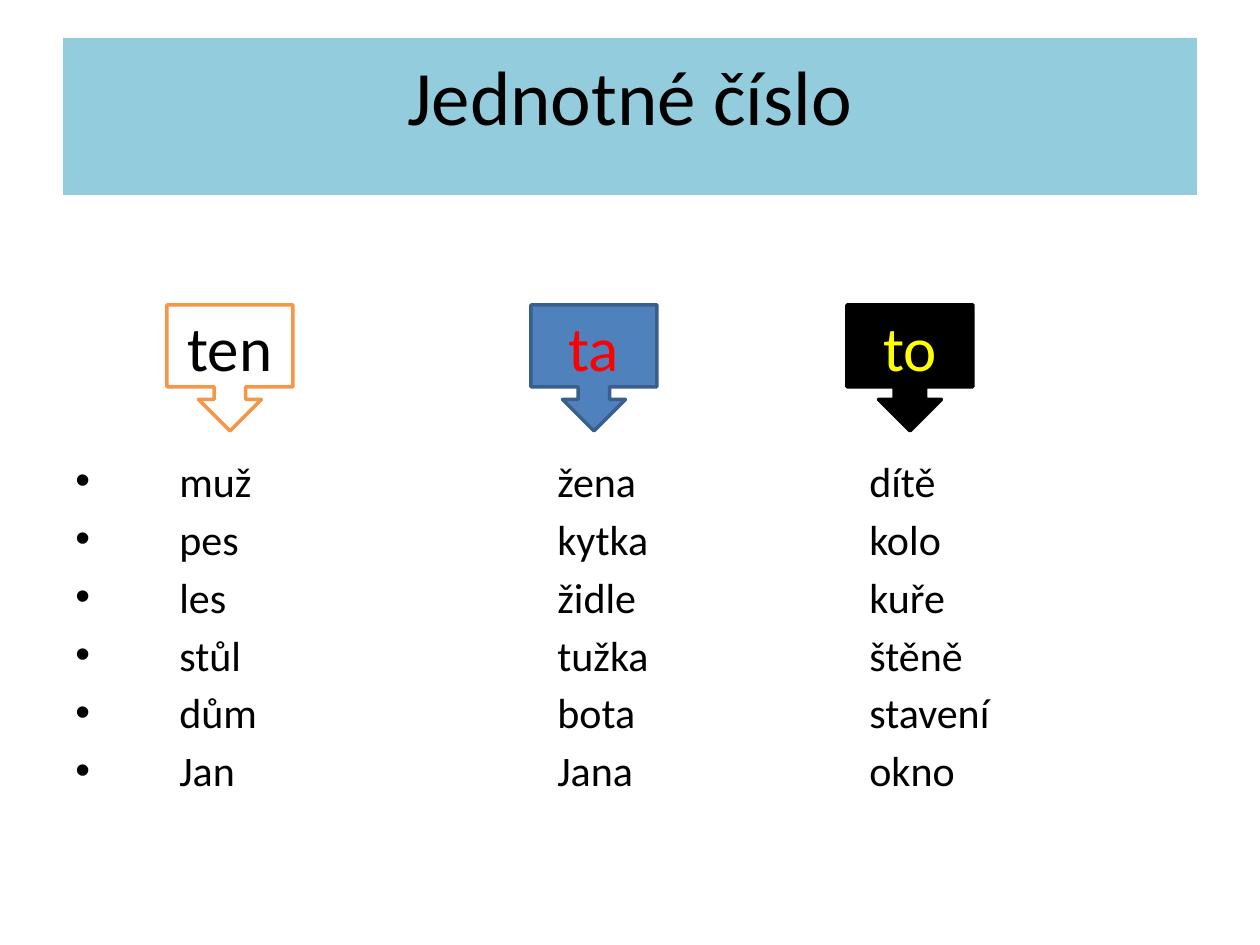
from dataclasses import dataclass

from lxml.etree import SubElement
from pptx import Presentation
from pptx.dml.color import RGBColor
from pptx.enum.shapes import MSO_SHAPE as Shape
from pptx.enum.text import MSO_ANCHOR as Anchor, PP_ALIGN as Align
from pptx.oxml.ns import qn
from pptx.util import Emu, Pt

FONT = "Calibri"
COLORS = {
    "banner": "93CDDD",
    "black": "000000",
    "white": "FFFFFF",
    "orange": "F79646",
    "blue": "4F81BD",
    "navy": "3A5F8C",
    "red": "FF0000",
    "yellow": "FFFF00",
}


@dataclass
class Callout:
    word: str
    left: int
    fill: str
    line: str
    text: str


CALLOUTS = [
    Callout("ten", 167, "white", "orange", "black"),
    Callout("ta", 531, "blue", "navy", "red"),
    Callout("to", 847, "black", "black", "yellow"),
]
NOUNS = [
    ("muž", "žena", "dítě"),
    ("pes", "kytka", "kolo"),
    ("les", "židle", "kuře"),
    ("stůl", "tužka", "štěně"),
    ("dům", "bota", "stavení"),
    ("Jan", "Jana", "okno"),
]
TAB_STOPS = (104, 482, 794)


def px(length: int) -> Emu:
    return Emu(round(length * 914400 / 126))


def color(name: str) -> RGBColor:
    return RGBColor.from_string(COLORS[name])


def style(para, size: int, name: str) -> None:
    para.font.name = FONT
    para.font.size = Pt(size)
    para.font.color.rgb = color(name)


def add_title(page, text: str) -> None:
    title = page.shapes.title
    title.left, title.top, title.width, title.height = map(px, (63, 38, 1134, 157))
    title.fill.solid()
    title.fill.fore_color.rgb = color("banner")
    frame = title.text_frame
    frame.text = text
    frame.vertical_anchor = Anchor.TOP
    frame.margin_top = px(10)
    para = frame.paragraphs[0]
    para.alignment = Align.CENTER
    style(para, 44, "black")


def add_bullet_and_tabs(para) -> None:
    props = para._p.get_or_add_pPr()
    props.set("marL", "0")
    props.set("indent", "0")
    SubElement(props, qn("a:buFont"), typeface="Arial")
    SubElement(props, qn("a:buChar"), char="•")
    tabs = SubElement(props, qn("a:tabLst"))
    for stop in TAB_STOPS:
        SubElement(tabs, qn("a:tab"), pos=str(px(stop)), algn="l")


def add_nouns(page) -> None:
    box = page.shapes.add_textbox(px(63), px(449), px(1134), px(395))
    frame = box.text_frame
    frame.word_wrap = True
    for index, row in enumerate(NOUNS):
        para = frame.add_paragraph() if index else frame.paragraphs[0]
        para.text = "\t" + "\t".join(row)
        para.space_before = Pt(4.3)
        style(para, 24, "black")
        add_bullet_and_tabs(para)


def add_callout(page, callout: Callout) -> None:
    shape = page.shapes.add_shape(
        Shape.DOWN_ARROW_CALLOUT, px(callout.left), px(305), px(126), px(126))
    shape.shadow.inherit = False
    shape.fill.solid()
    shape.fill.fore_color.rgb = color(callout.fill)
    shape.line.color.rgb = color(callout.line)
    shape.line.width = Pt(2)
    frame = shape.text_frame
    frame.text = callout.word
    frame.vertical_anchor = Anchor.MIDDLE
    para = frame.paragraphs[0]
    para.alignment = Align.CENTER
    style(para, 36, callout.text)


def main() -> None:
    deck = Presentation()
    deck.slide_width, deck.slide_height = px(1260), px(945)
    page = deck.slides.add_slide(deck.slide_layouts[5])

    # Heading banner
    add_title(page, "Jednotné číslo")

    # Nouns in three tabbed columns, one per gender
    add_nouns(page)

    # Pronoun callouts above the columns
    for callout in CALLOUTS:
        add_callout(page, callout)

    deck.save("out.pptx")


if __name__ == "__main__":
    main()
